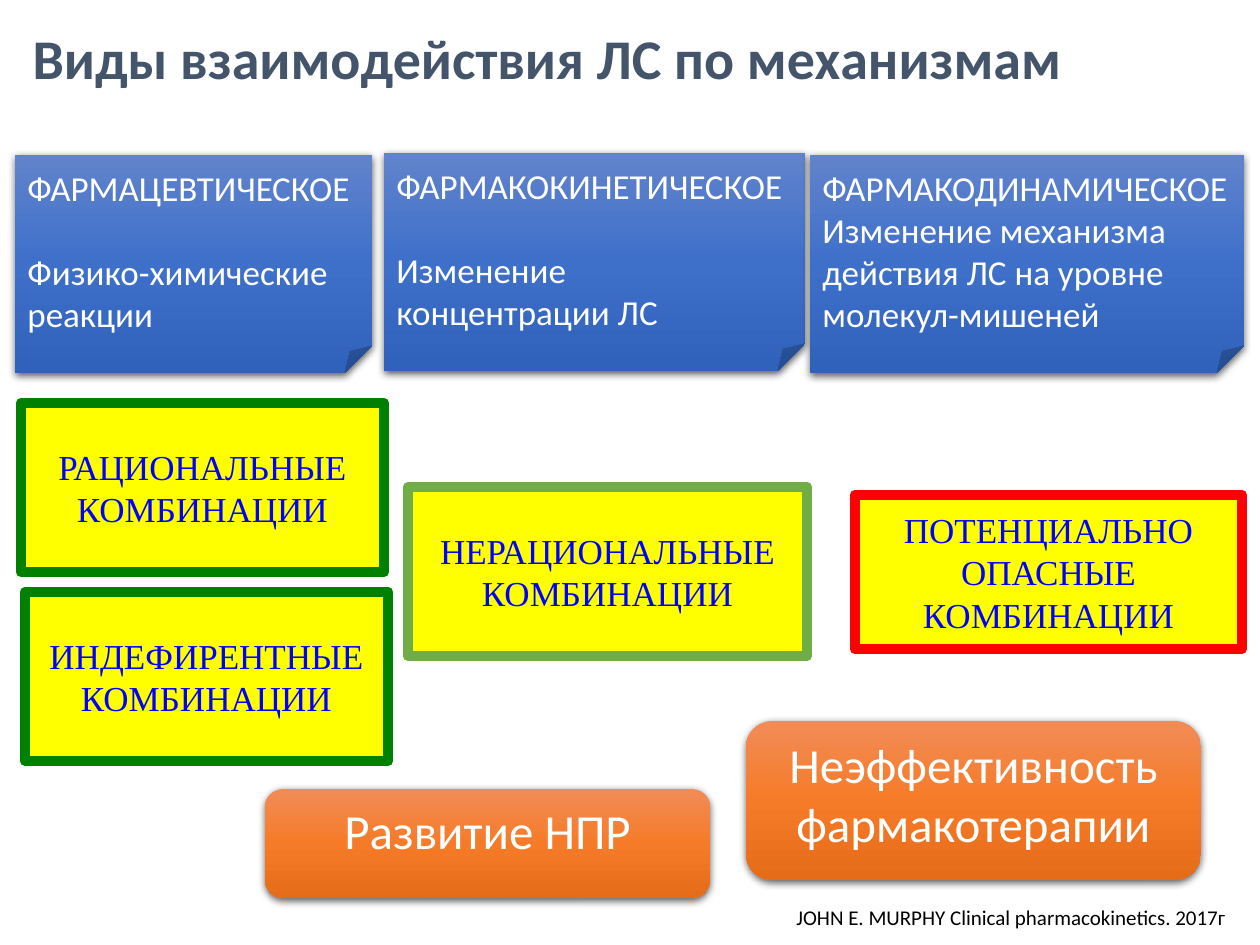
from copy import deepcopy

from lxml.etree import SubElement
from pptx import Presentation
from pptx.dml.color import RGBColor
from pptx.enum.shapes import MSO_SHAPE
from pptx.enum.text import MSO_ANCHOR, PP_ALIGN
from pptx.oxml.ns import qn
from pptx.util import Emu, Pt

PX = 914400 / 126
BLUE_GRADIENT = ["6183CB", "3E70CA", "3062BB"]
ORANGE_GRADIENT = ["F18C57", "F67B28", "E56C19"]
CARD_TEXT = {"name": "Calibri", "size": Pt(20), "color": "FFFFFF"}
COMBINATION_TEXT = {"name": "Times New Roman", "size": Pt(20), "color": "0000FF"}
OUTCOME_TEXT = {"name": "Calibri", "size": Pt(28), "color": "FFFFFF"}
TITLE_TEXT = {"name": "Calibri", "size": Pt(32), "bold": True, "color": "44546A"}
SOURCE_TEXT = {"name": "Calibri", "size": Pt(12), "color": "000000"}


def write(shape, lines, font_format, alignment, anchor, wrap):
    """Fill a shape with one paragraph per line."""
    frame = shape.text_frame
    frame.text = "\n".join(lines)
    frame.word_wrap = wrap
    frame.vertical_anchor = anchor
    for paragraph in frame.paragraphs:
        paragraph.alignment = alignment
        font = paragraph.runs[0].font
        for name, value in font_format.items():
            if name == "color":
                font.color.rgb = RGBColor.from_string(value)
            else:
                setattr(font, name, value)


def add_glossy_shape(kind, box, colors):
    """Add a borderless shape with a vertical gradient and a soft shadow."""
    shape = slide.shapes.add_shape(kind, *[Emu(round(v * PX)) for v in box])
    shape.line.fill.background()
    shape.fill.gradient()
    shape.fill.gradient_angle = 270
    stop_list = shape._element.spPr.find(qn("a:gradFill")).find(qn("a:gsLst"))
    stop_list.insert(1, deepcopy(stop_list[0]))
    for stop, position, color in zip(shape.fill.gradient_stops, (0, 0.5, 1), colors):
        stop.position = position
        stop.color.rgb = RGBColor.from_string(color)
    shape.shadow.inherit = False
    effects = shape._element.spPr.find(qn("a:effectLst"))
    shadow = SubElement(effects, qn("a:outerShdw"), blurRad=str(Pt(4.5)),
                        dist=str(Pt(1.5)), dir="5400000", algn="ctr", rotWithShape="0")
    shadow_color = SubElement(shadow, qn("a:srgbClr"), val="000000")
    SubElement(shadow_color, qn("a:alpha"), val="63000")
    return shape


presentation = Presentation()
presentation.slide_width = Emu(round(1260 * PX))
presentation.slide_height = Emu(round(945 * PX))
slide = presentation.slides.add_slide(presentation.slide_layouts[5])

title = slide.shapes.title
title.left, title.top, title.width, title.height = [
    Emu(round(v * PX)) for v in (20, 6, 1196, 110)]
write(title, ["Виды взаимодействия ЛС по механизмам"], TITLE_TEXT,
      PP_ALIGN.LEFT, MSO_ANCHOR.MIDDLE, True)
title.text_frame.paragraphs[0].line_spacing = 0.9

# Interaction mechanisms: box, gap below the heading, lines
mechanisms = [
    ((15, 155, 357, 218), 24,
     ["ФАРМАЦЕВТИЧЕСКОЕ", "Физико-химические", "реакции"]),
    ((384, 153, 421, 218), 24,
     ["ФАРМАКОКИНЕТИЧЕСКОЕ", "Изменение", "концентрации ЛС"]),
    ((810, 155, 434, 218), 0,
     ["ФАРМАКОДИНАМИЧЕСКОЕ", "Изменение механизма", "действия ЛС на уровне",
      "молекул-мишеней"]),
]
for box, gap, lines in mechanisms:
    card = add_glossy_shape(MSO_SHAPE.FOLDED_CORNER, box, BLUE_GRADIENT)
    # The library lists no adjustment for a folded corner
    geometry = card._element.spPr.find(qn("a:prstGeom"))
    SubElement(geometry.find(qn("a:avLst")), qn("a:gd"), name="adj", fmla="val 12500")
    write(card, lines, CARD_TEXT, PP_ALIGN.LEFT, MSO_ANCHOR.MIDDLE, False)
    card.text_frame.paragraphs[0].space_after = Pt(gap)

# Drug combinations: box, border color, lines
combinations = [
    ((21, 403, 363, 169), "008000", ["РАЦИОНАЛЬНЫЕ", "КОМБИНАЦИИ"]),
    ((25, 592, 363, 169), "008000", ["ИНДЕФИРЕНТНЫЕ", "КОМБИНАЦИИ"]),
    ((408, 487, 399, 169), "70AD47", ["НЕРАЦИОНАЛЬНЫЕ", "КОМБИНАЦИИ"]),
    ((855, 495, 387, 154), "FF0000", ["ПОТЕНЦИАЛЬНО", "ОПАСНЫЕ", "КОМБИНАЦИИ"]),
]
for box, border, lines in combinations:
    combination = slide.shapes.add_shape(
        MSO_SHAPE.RECTANGLE, *[Emu(round(v * PX)) for v in box])
    combination.shadow.inherit = False
    combination.fill.solid()
    combination.fill.fore_color.rgb = RGBColor.from_string("FFFF00")
    combination.line.color.rgb = RGBColor.from_string(border)
    combination.line.width = Pt(6)
    write(combination, lines, COMBINATION_TEXT, PP_ALIGN.CENTER, MSO_ANCHOR.MIDDLE, False)

outcomes = [
    ((265, 789, 445, 109), "Развитие НПР"),
    ((746, 721, 455, 159), "Неэффективность фармакотерапии"),
]
for box, text in outcomes:
    outcome = add_glossy_shape(MSO_SHAPE.ROUNDED_RECTANGLE, box, ORANGE_GRADIENT)
    write(outcome, [text], OUTCOME_TEXT, PP_ALIGN.CENTER, MSO_ANCHOR.TOP, True)

source = slide.shapes.add_textbox(*[Emu(round(v * PX)) for v in (784, 898, 460, 38)])
write(source, ["JOHN E. MURPHY Clinical pharmacokinetics. 2017г"], SOURCE_TEXT,
      PP_ALIGN.LEFT, MSO_ANCHOR.TOP, False)

presentation.save("out.pptx")
